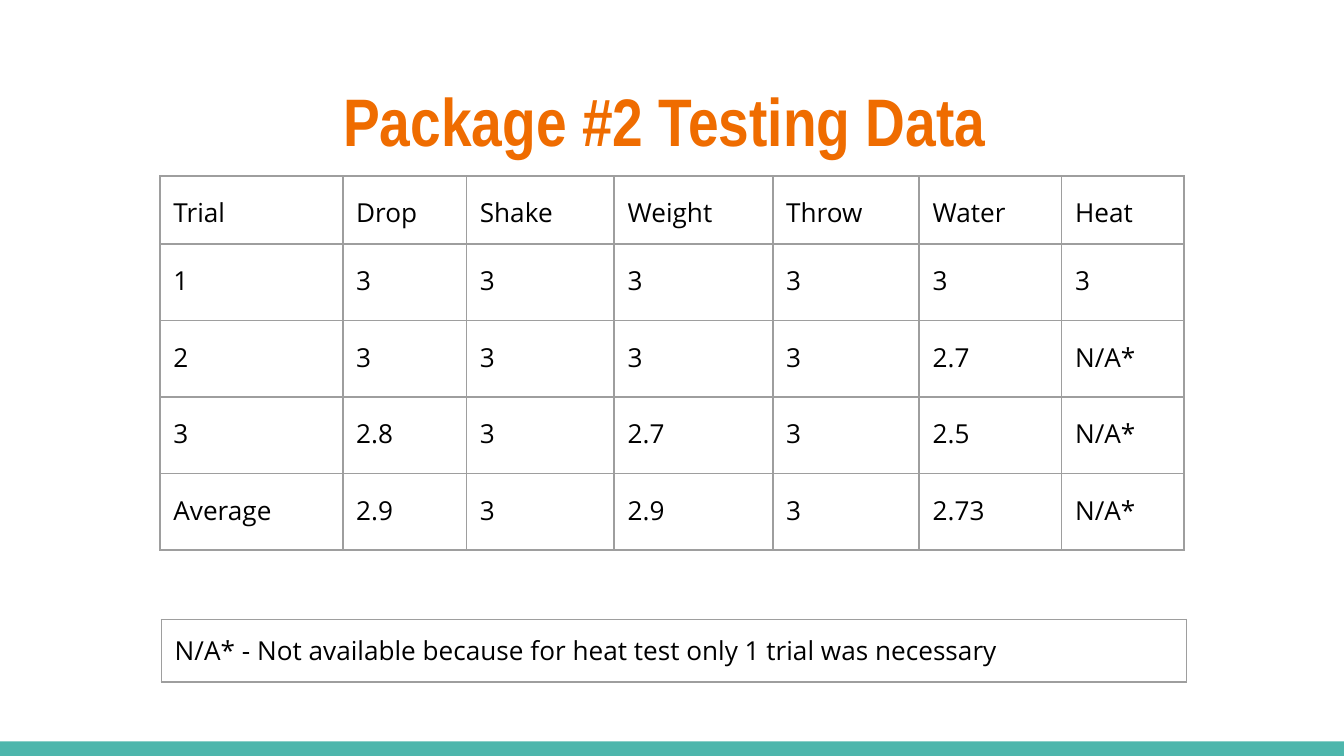
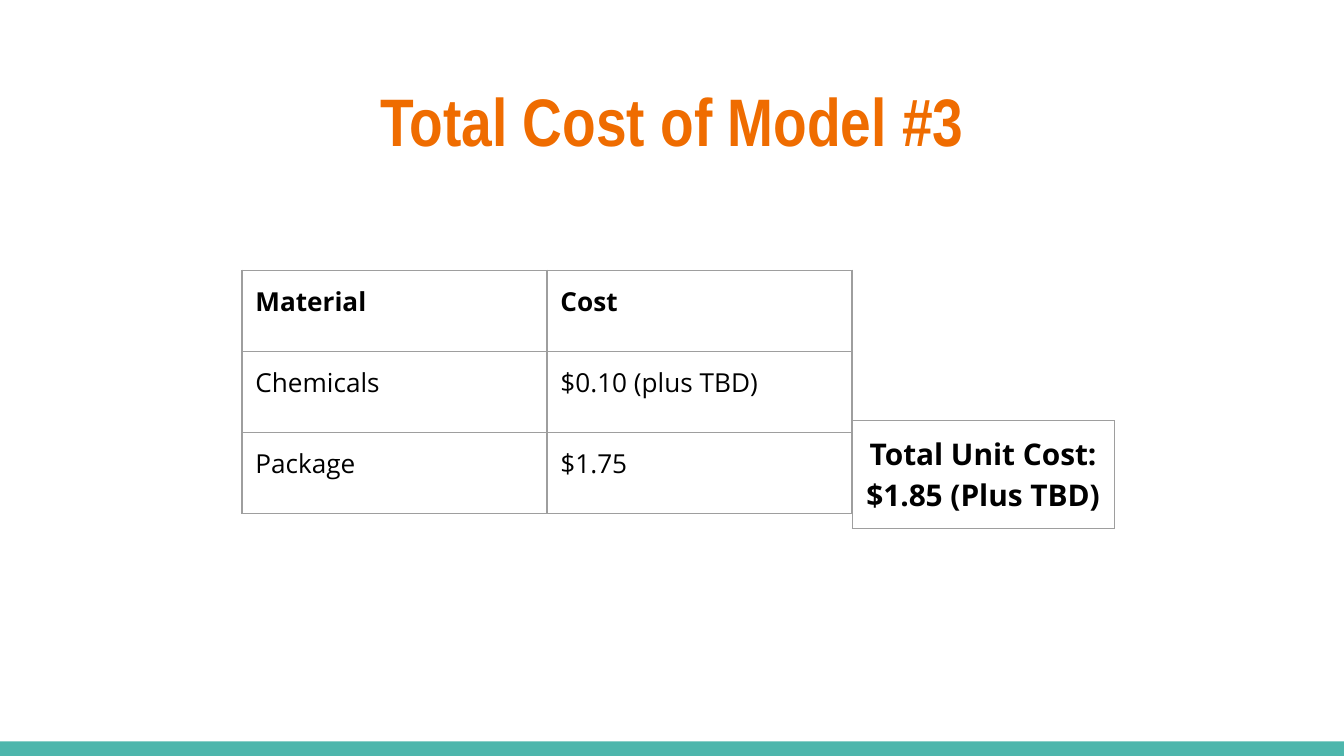
import pptx
import pptx.util
import pptx.dml.color
import pptx.enum.shapes
import pptx.enum.text
import pptx.oxml
import pptx.oxml.ns
from dataclasses import dataclass

COLORS = {"title": "EF6C00", "band": "4DB6AC", "border": "9E9E9E", "text": "000000", "page": "FFFFFF"}
FONTS = {"title": "Arial Narrow", "body": "Open Sans"}
GRID_COLUMNS, GRID_ROWS = 100, 56.25
UNIT = pptx.util.Inches(10) // GRID_COLUMNS
CENTER = pptx.enum.text.PP_ALIGN.CENTER
SIDES = "LRTB"

TESTS = [
    ["Trial", "Drop", "Shake", "Weight", "Throw", "Water", "Heat"],
    ["1", "3", "3", "3", "3", "3", "3"],
    ["2", "3", "3", "3", "3", "2.7", "N/A*"],
    ["3", "2.8", "3", "2.7", "3", "2.5", "N/A*"],
    ["Average", "2.9", "3", "2.9", "3", "2.73", "N/A*"],
]
TEST_NOTE = "N/A* - Not available because for heat test only 1 trial was necessary"
COSTS = [["Material", "Cost"], ["Chemicals", "$0.10 (plus TBD)"], ["Package", "$1.75"]]
TOTAL_COST = "Total Unit Cost: $1.85 (Plus TBD)"


@dataclass
class Box:
    """A region measured in grid columns and rows."""
    left: float
    top: float
    width: float
    height: float

    def lengths(self):
        """Return the region as slide lengths."""
        return [grid(n) for n in (self.left, self.top, self.width, self.height)]


def grid(count):
    """Turn a count of grid units into a length."""
    return pptx.util.Emu(round(count * UNIT))


def rgb(name):
    """Look up a colour by its role."""
    return pptx.dml.color.RGBColor.from_string(COLORS[name])


def style_font(font, name, size, color, bold=False):
    """Apply a face, size, colour and weight."""
    font.name, font.size, font.bold = name, pptx.util.Pt(size), bold
    font.color.rgb = rgb(color)


def set_borders(cell, sides, points):
    """Draw the named sides of a cell and clear the others."""
    properties = cell._tc.get_or_add_tcPr()
    for side in SIDES:
        fill = f'<a:solidFill><a:srgbClr val="{COLORS["border"]}"/></a:solidFill>'
        if side not in sides:
            fill = "<a:noFill/>"
        properties.append(pptx.oxml.parse_xml(
            f'<a:ln{side} {pptx.oxml.ns.nsdecls("a")} w="{pptx.util.Pt(points)}">{fill}</a:ln{side}>'))


def fill_cell(cell, text, size, bold, align, spacing):
    """Write padded text into a cell."""
    cell.margin_left = cell.margin_right = cell.margin_top = cell.margin_bottom = grid(1)
    para = cell.text_frame.paragraphs[0]
    para.text = text
    para.alignment, para.line_spacing = align, spacing
    style_font(para.font, FONTS["body"], size, "text", bold)


def add_grid_table(page, box, values, widths, heights, size=14, points=0.75,
                   bold_rows=(), align=None, spacing=None, sides=None):
    """Build a bordered table of values inside a box."""
    table = page.shapes.add_table(len(values), len(widths), *box.lengths()).table
    table.first_row = table.horz_banding = False
    for column, width in zip(table.columns, widths):
        column.width = grid(width)
    for number, (row, height, texts) in enumerate(zip(table.rows, heights, values)):
        row.height = grid(height)
        for cell, text in zip(row.cells, texts):
            set_borders(cell, sides[number] if sides else SIDES, points)
            cell.fill.background()
            if text:
                fill_cell(cell, text, size, number in bold_rows, align, spacing)


def add_titled_page(deck, title):
    """Add a page with the shared title style."""
    page = deck.slides.add_slide(deck.slide_layouts[5])
    shape = page.shapes.title
    shape.left, shape.top, shape.width, shape.height = Box(3.4, 4.9, 93.2, 7.7).lengths()
    frame = shape.text_frame
    frame.auto_size = pptx.enum.text.MSO_AUTO_SIZE.NONE
    frame.vertical_anchor = pptx.enum.text.MSO_ANCHOR.TOP
    frame.margin_left = frame.margin_right = frame.margin_top = frame.margin_bottom = grid(1)
    para = frame.paragraphs[0]
    para.text, para.alignment = title, CENTER
    style_font(para.font, FONTS["title"], 36, "title", True)
    return page


def add_master_band(deck, page):
    """Place the footer band and background on the master."""
    background = deck.slide_master.background.fill
    background.solid()
    background.fore_color.rgb = rgb("page")
    height = 1.08
    band = page.shapes.add_shape(pptx.enum.shapes.MSO_SHAPE.RECTANGLE,
                                 *Box(0, GRID_ROWS - height, GRID_COLUMNS, height).lengths())
    band.shadow.inherit = False
    band.fill.solid()
    band.fill.fore_color.rgb = rgb("band")
    band.line.fill.background()
    deck.slide_master.shapes.element.insert(2, band.element)


def add_testing_page(deck):
    """Show the trial results and their footnote."""
    page = add_titled_page(deck, "Package #2 Testing Data ")
    add_grid_table(page, Box(12, 46.1, 76.3, 4.3), [[TEST_NOTE]], [76.3], [4.2])
    add_grid_table(page, Box(11.9, 13.1, 76.2, 27.5), TESTS,
                   [13.6, 9.2, 11, 11.8, 10.9, 10.6, 9.1], [4.3] + [5.7] * 4,
                   points=1, spacing=1.15)
    return page


def add_cost_page(deck):
    """Show the material costs with the total beside them."""
    page = add_titled_page(deck, "Total Cost of Model #3")
    costs = Box(18, 20.1, 45.4, 18.1)
    add_grid_table(page, costs, COSTS, [costs.width / 2] * 2, [costs.height / 3] * 3, bold_rows=[0])
    total = Box(costs.left + costs.width, costs.top, 19.5, 18.6)
    add_grid_table(page, total, [[""], [""], [TOTAL_COST]], [total.width], [4.5, 6.7, 7.6],
                   size=16, bold_rows=[2], align=CENTER, sides=["L", "LB", SIDES])
    return page


def main():
    """Build and save the deck."""
    deck = pptx.Presentation()
    deck.slide_width, deck.slide_height = grid(GRID_COLUMNS), grid(GRID_ROWS)
    add_master_band(deck, add_testing_page(deck))
    add_cost_page(deck)
    deck.save("out.pptx")


if __name__ == "__main__":
    main()
